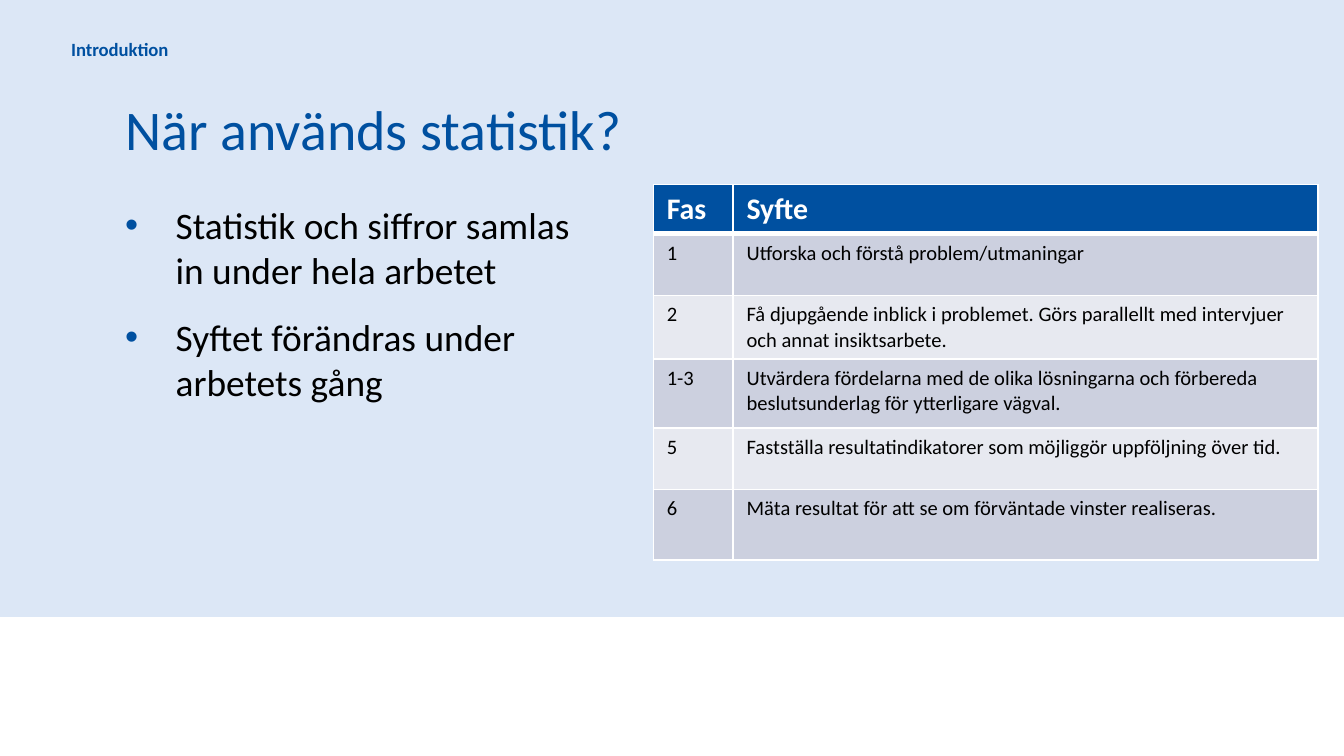
from dataclasses import dataclass

from lxml.etree import SubElement
from pptx import Presentation
from pptx.dml.color import RGBColor
from pptx.enum.shapes import MSO_SHAPE as Shape
from pptx.enum.text import MSO_ANCHOR as Anchor, PP_ALIGN as Align
from pptx.oxml.ns import qn
from pptx.util import Pt

FONT = "Calibri"
COLORS = {
    "blue": "0050A0",
    "band": "DCE7F6",
    "dark_row": "CCD0DF",
    "light_row": "E7E9F0",
    "white": "FFFFFF",
    "black": "000000",
}


@dataclass
class Box:
    left: float
    top: float
    width: float
    height: float

    def lengths(self) -> tuple:
        return Pt(self.left), Pt(self.top), Pt(self.width), Pt(self.height)


@dataclass
class Style:
    size: float
    color: str
    bold: bool = False


@dataclass
class Row:
    phase: str
    purpose: str
    height: float


TITLE = Style(30, "blue")
SECTION = Style(10, "blue", bold=True)
BULLET = Style(20, "black")
HEADER = Style(16, "white", bold=True)
CELL = Style(11, "black")

BULLETS = [
    "Statistik och siffror samlas \vin under hela arbetet",
    "Syftet förändras under \varbetets gång",
]
ROWS = [
    Row("Fas", "Syfte", 26),
    Row("1", "Utforska och förstå problem/utmaningar", 33),
    Row("2", "Få djupgående inblick i problemet. Görs parallellt med "
        "intervjuer och annat insiktsarbete.", 34),
    Row("1-3", "Utvärdera fördelarna med de olika lösningarna och förbereda "
        "beslutsunderlag för ytterligare vägval.", 37),
    Row("5", "Fastställa resultatindikatorer som möjliggör uppföljning över tid.", 33),
    Row("6", "Mäta resultat för att se om förväntade vinster realiseras.", 38),
]
COLUMN_WIDTHS = [42.8, 313.2]


def rgb(name: str) -> RGBColor:
    return RGBColor.from_string(COLORS[name])


def format_paragraph(paragraph, style: Style) -> None:
    paragraph.alignment = Align.LEFT
    for run in paragraph.runs:
        run.font.name = FONT
        run.font.size = Pt(style.size)
        run.font.bold = style.bold
        run.font.color.rgb = rgb(style.color)


def add_text(slide, box: Box, texts: list[str], style: Style, anchor: Anchor):
    text_frame = slide.shapes.add_textbox(*box.lengths()).text_frame
    text_frame.word_wrap = True
    text_frame.vertical_anchor = anchor
    text_frame.text = "\n".join(texts)
    for paragraph in text_frame.paragraphs:
        format_paragraph(paragraph, style)
    return text_frame


def add_bullet(paragraph) -> None:
    properties = paragraph._p.get_or_add_pPr()
    properties.set("marL", str(Pt(27)))
    properties.set("indent", str(-Pt(27)))
    color = SubElement(properties, qn("a:buClr"))
    SubElement(color, qn("a:srgbClr"), val=COLORS["blue"])
    SubElement(properties, qn("a:buFont"), typeface="Arial")
    SubElement(properties, qn("a:buChar"), char="•")


def add_border(cell, side: str, width: float) -> None:
    line = SubElement(cell._tc.get_or_add_tcPr(), qn(f"a:ln{side}"), w=str(Pt(width)))
    fill = SubElement(line, qn("a:solidFill"))
    SubElement(fill, qn("a:srgbClr"), val=COLORS["white"])


def format_cell(cell, row_index: int) -> None:
    # The line under the header is thicker than the others
    widths = {"L": 1, "R": 1, "T": 3 if row_index == 1 else 1, "B": 3 if row_index == 0 else 1}
    for side, width in widths.items():
        add_border(cell, side, width)
    if row_index == 0:
        fill_name = "blue"
    else:
        fill_name = "dark_row" if row_index % 2 else "light_row"
    cell.fill.solid()
    cell.fill.fore_color.rgb = rgb(fill_name)
    format_paragraph(cell.text_frame.paragraphs[0], CELL if row_index else HEADER)


def add_phase_table(slide, box: Box, rows: list[Row]) -> None:
    table = slide.shapes.add_table(len(rows), len(COLUMN_WIDTHS), *box.lengths()).table
    for column, width in zip(table.columns, COLUMN_WIDTHS):
        column.width = Pt(width)
    for row_index, row in enumerate(rows):
        table.rows[row_index].height = Pt(row.height)
        for column_index, text in enumerate((row.phase, row.purpose)):
            cell = table.cell(row_index, column_index)
            cell.text = text
            format_cell(cell, row_index)


def main() -> None:
    presentation = Presentation()
    presentation.slide_width, presentation.slide_height = Pt(720), Pt(405)
    slide = presentation.slides.add_slide(presentation.slide_layouts[5])

    # Background band, behind the title
    band = slide.shapes.add_shape(Shape.RECTANGLE, *Box(0, 0, 720, 330.5).lengths())
    band.shadow.inherit = False
    band.fill.solid()
    band.fill.fore_color.rgb = rgb("band")
    band.line.fill.background()
    slide.shapes.element.insert(2, band.element)

    # Title
    title = slide.shapes.title
    title.left, title.top, title.width, title.height = Box(60, 45.5, 607, 46).lengths()
    title.text_frame.text = "När används statistik?"
    title.text_frame.vertical_anchor = Anchor.MIDDLE
    format_paragraph(title.text_frame.paragraphs[0], TITLE)

    # Bullets
    body = add_text(slide, Box(60, 105, 607, 205), BULLETS, BULLET, Anchor.TOP)
    for index, paragraph in enumerate(body.paragraphs):
        paragraph.space_before = Pt(6 if index else 0)
        paragraph.space_after = Pt(6)
        add_bullet(paragraph)

    # Section label
    add_text(slide, Box(31, 19.5, 635, 13), ["Introduktion"], SECTION, Anchor.MIDDLE)

    # Phases and their purposes
    table_height = sum(row.height for row in ROWS)
    add_phase_table(slide, Box(350, 98.8, sum(COLUMN_WIDTHS), table_height), ROWS)

    presentation.save("out.pptx")


if __name__ == "__main__":
    main()
